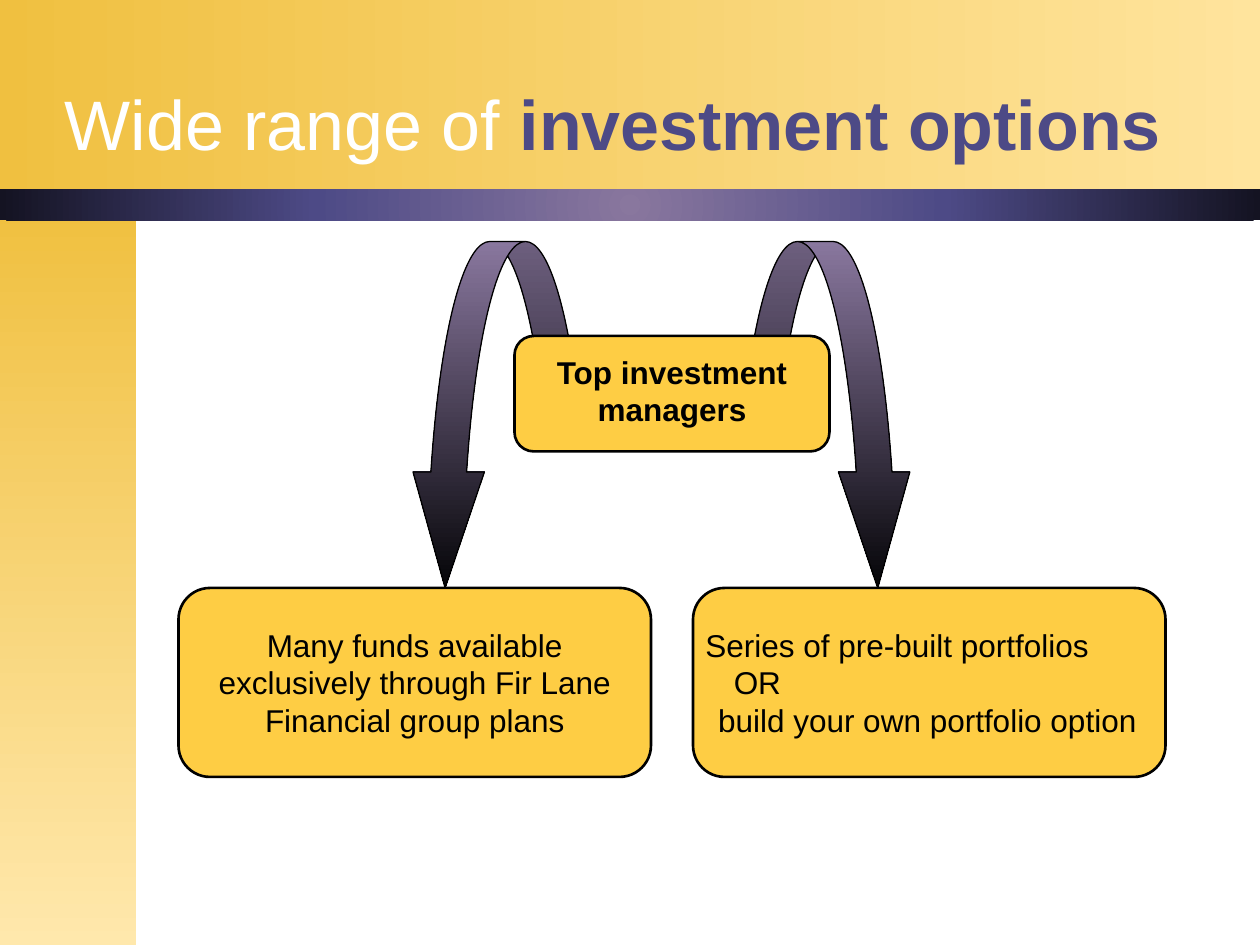
"""Build the slide on the wide range of investment options."""
from dataclasses import dataclass

from pptx import Presentation
from pptx.dml.color import RGBColor
from pptx.enum.shapes import MSO_SHAPE
from pptx.enum.text import MSO_ANCHOR, PP_ALIGN
from pptx.oxml import parse_xml
from pptx.oxml.ns import nsdecls, qn
from pptx.util import Pt

RECT = MSO_SHAPE.RECTANGLE
CARD = MSO_SHAPE.FLOWCHART_ALTERNATE_PROCESS
CURVE = MSO_SHAPE.CURVED_DOWN_ARROW
LEFT, MID = PP_ALIGN.LEFT, PP_ALIGN.CENTER
TOP, LOW = MSO_ANCHOR.TOP, MSO_ANCHOR.BOTTOM
PX = 7620
FONT = "Arial"
HUES = {
    "white": "FFFFFF", "black": "000000", "card": "FECD44",
    "gold": "F0C040", "cream": "FFE49D", "pale": "FFE8AC",
    "mauve": "89779E", "plum": "4D4A86", "night": "141322", "ink": "050508",
}


@dataclass(frozen=True)
class Box:
    """A place on the slide in px."""
    x: int
    y: int
    w: int
    h: int


@dataclass(frozen=True)
class Run:
    """A stretch of text in one style."""
    text: str
    size: int = 18
    hue: str = "black"
    bold: bool = False


@dataclass(frozen=True)
class Line:
    """A paragraph with its alignment and indent."""
    runs: tuple[Run, ...]
    align: PP_ALIGN = MID
    dent: int = 0


@dataclass(frozen=True)
class Card:
    """A rounded card and the text laid over it."""
    box: Box
    area: Box
    lines: tuple[Line, ...]


@dataclass(frozen=True)
class Blend:
    """Gradient colours with an angle, or from the centre when it is None."""
    hues: tuple[str, ...]
    angle: int | None = 90


def tint(name: str) -> RGBColor:
    """Give the colour of a named hue."""
    return RGBColor.from_string(HUES[name])


def draw(slide, kind: MSO_SHAPE, box: Box, fill: str | Blend, edge: float = 0):
    """Add a filled shape with an optional black edge."""
    shape = slide.shapes.add_shape(kind, box.x * PX, box.y * PX, box.w * PX, box.h * PX)
    shape.shadow.inherit = False
    if isinstance(fill, Blend):
        blend(shape, fill)
    else:
        shape.fill.solid()
        shape.fill.fore_color.rgb = tint(fill)
    if edge:
        shape.line.color.rgb = tint("black")
        shape.line.width = Pt(edge)
    else:
        shape.line.fill.background()
    return shape


def blend(shape, fill: Blend) -> None:
    """Fill a shape with evenly spaced gradient stops."""
    step = 100000 // (len(fill.hues) - 1)
    stops = "".join(
        f'<a:gs pos="{i * step}"><a:srgbClr val="{HUES[hue]}"/></a:gs>'
        for i, hue in enumerate(fill.hues))
    if fill.angle is None:
        mode = '<a:path path="circle"><a:fillToRect l="50000" t="50000" r="50000" b="50000"/></a:path>'
    else:
        mode = f'<a:lin ang="{fill.angle * 60000}" scaled="1"/>'
    node = parse_xml(
        f'<a:gradFill {nsdecls("a")} rotWithShape="0"><a:gsLst>{stops}</a:gsLst>{mode}</a:gradFill>')
    shape._element.spPr.find(qn("a:prstGeom")).addnext(node)


def write(slide, box: Box, lines: tuple[Line, ...], anchor: MSO_ANCHOR = TOP) -> None:
    """Add a text box, run by run."""
    frame = slide.shapes.add_textbox(box.x * PX, box.y * PX, box.w * PX, box.h * PX).text_frame
    frame.word_wrap = True
    frame.vertical_anchor = anchor
    for i, line in enumerate(lines):
        para = frame.add_paragraph() if i else frame.paragraphs[0]
        para.alignment = line.align
        if line.dent:
            para._p.get_or_add_pPr().set("marL", str(line.dent * PX))
        for run in line.runs:
            part = para.add_run()
            part.text = run.text
            part.font.name = FONT
            part.font.size = Pt(run.size)
            part.font.bold = run.bold
            part.font.color.rgb = tint(run.hue)


def arrow(slide, x: int, flip: bool) -> None:
    """Add a curved arrow, mirrored when flip is set."""
    shape = draw(slide, CURVE, Box(x, 230, 170, 330), Blend(("mauve", "ink")), 0.75)
    for i, part in enumerate((0.2, 0.4, 0.647)):
        shape.adjustments[i] = round(part, 2) if i < 2 else 0.65
    if flip:
        shape._element.spPr.xfrm.set("flipH", "1")


def plan(x: int, lines: tuple[Line, ...]) -> Card:
    """Place one of the lower cards."""
    return Card(Box(x, 560, 450, 180), Box(x, 590, 450, 120), lines)


TITLE = Line((Run("Wide range of ", 40, "white"),
              Run("investment options", 40, "plum", True)), LEFT)
CARDS = (
    Card(Box(490, 320, 300, 110), Box(500, 330, 280, 84),
         (Line((Run("Top investment managers", bold=True),)),)),
    plan(170, (Line((Run("Many funds available exclusively through Fir Lane Financial group plans"),)),)),
    plan(660, (Line((Run("Series of pre-built portfolios"),), LEFT),
               Line((Run("OR"),), LEFT, 27),
               Line((Run("build your own portfolio option"),), LEFT, 12))),
)


def main() -> None:
    """Build and save the deck."""
    deck = Presentation()
    deck.slide_width, deck.slide_height = 1200 * PX, 900 * PX
    slide = deck.slides.add_slide(deck.slide_layouts[6])
    draw(slide, RECT, Box(0, 0, 1200, 180), Blend(("gold", "cream"), 0))
    draw(slide, RECT, Box(0, 200, 130, 700), Blend(("gold", "pale")))
    draw(slide, RECT, Box(0, 180, 1200, 30), Blend(("mauve", "plum", "night"), None))
    write(slide, Box(50, 0, 1120, 163), (TITLE,), LOW)
    arrow(slide, 700, False)
    arrow(slide, 390, True)
    draw(slide, RECT, Box(520, 400, 250, 310), "white")
    for card in CARDS:
        draw(slide, CARD, card.box, "card", 1.5)
        write(slide, card.area, card.lines)
    deck.save("out.pptx")


if __name__ == "__main__":
    main()
